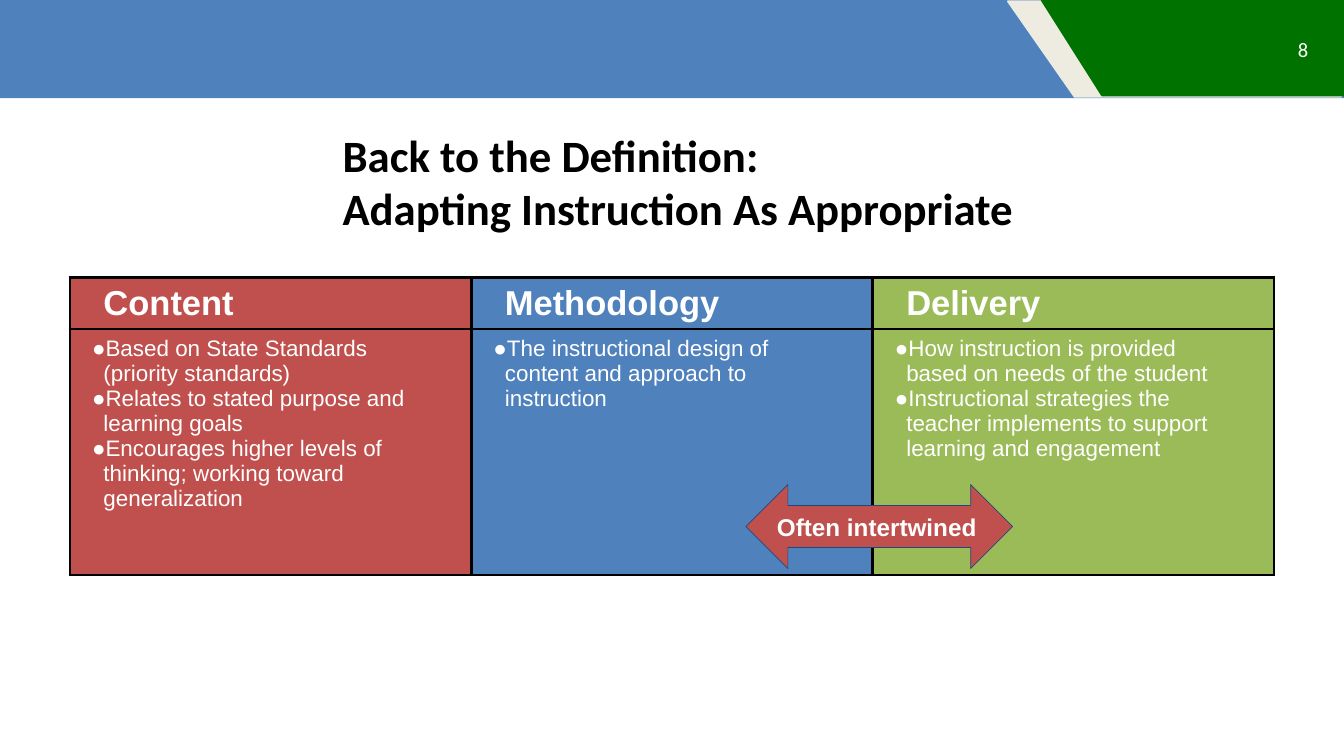
import pptx
import pptx.util
import pptx.dml.color
import pptx.enum.shapes
import pptx.enum.text
import pptx.oxml
import pptx.oxml.ns

SHAPES = pptx.enum.shapes.MSO_SHAPE
MIDDLE = pptx.enum.text.MSO_ANCHOR.MIDDLE
COLORS = {
    "blue": "4F81BD", "cream": "EEECE1", "dark_green": "007200", "red": "C0504D",
    "lime": "9BBB59", "navy": "1F497D", "black": "000000", "white": "FFFFFF",
}
COLUMNS, ROWS = 80, 45

deck = pptx.Presentation()
deck.slide_width = pptx.util.Inches(20)
deck.slide_height = pptx.util.Inches(11.25)
slide = deck.slides.add_slide(deck.slide_layouts[6])


def place(left, top, width, height):
    column, row = deck.slide_width / COLUMNS, deck.slide_height / ROWS
    return [round(n) for n in (left * column, top * row, width * column, height * row)]


def write(paragraph, words, size, font, color, bold=False):
    run = paragraph.add_run()
    run.text = words
    run.font.size = pptx.util.Pt(size)
    run.font.name = font
    run.font.bold = bold
    run.font.color.rgb = pptx.dml.color.RGBColor.from_string(COLORS[color])


outlines = [
    (SHAPES.RECTANGLE, (0, 0, 80, 5.84), 0, "blue", None, 0),
    (SHAPES.FLOWCHART_MANUAL_INPUT, (67.08, -7, 5.68, 19.84), 270, "cream", "cream", 2),
    (SHAPES.FLOWCHART_MANUAL_INPUT, (68.16, -6.16, 5.68, 18), 270, "dark_green", "dark_green", 2),
]
arrow_outline = (SHAPES.LEFT_RIGHT_ARROW, (44.4, 28.84, 15.88, 5), 0, "red", "navy", 0.75)

title = slide.shapes.add_textbox(*place(20, 8.28, 48.72, 5)).text_frame
title.word_wrap = True
title.vertical_anchor = MIDDLE
write(title.paragraphs[0], "Back to the Definition:", 48, "Calibri", "black", True)
write(title.add_paragraph(), "Adapting Instruction As Appropriate", 48, "Calibri", "black", True)

topics = [
    ("Content", "red", [
        "Based on State Standards (priority standards)",
        "Relates to stated purpose and learning goals",
        "Encourages higher levels of thinking; working toward generalization",
    ]),
    ("Methodology", "blue", [
        "The instructional design of content and approach to instruction",
    ]),
    ("Delivery", "lime", [
        "How instruction is provided based on needs of the student",
        "Instructional strategies the teacher implements to support learning and engagement",
    ]),
]
topic_frame = slide.shapes.add_table(2, len(topics), *place(4.16, 16.52, 71.68, 17.72))
topic_table = topic_frame.table
topic_table.first_row = topic_table.horz_banding = False
for topic_row, height in zip(topic_table.rows, (3.08, 14.64)):
    topic_row.height = round(deck.slide_height * height / ROWS)

for index, (heading, color, points) in enumerate(topics):
    for level, lines in enumerate(([heading], points)):
        cell = topic_table.cell(level, index)
        cell.margin_left = cell.margin_top = pptx.util.Inches(0.1)
        cell.margin_right = pptx.util.Inches(0.7 if level else 0.1)
        cell.margin_bottom = pptx.util.Inches(0.1 if level else 0.05)
        properties = cell._tc.get_or_add_tcPr()
        for side in ("lnL", "lnR", "lnT", "lnB"):
            weight = 2 if side == ("lnB", "lnT")[level] else 3
            properties.append(pptx.oxml.parse_xml(
                f'<a:{side} {pptx.oxml.ns.nsdecls("a")} w="{pptx.util.Pt(weight)}"><a:solidFill>'
                f'<a:srgbClr val="{COLORS["black"]}"/></a:solidFill></a:{side}>'))
        cell.fill.solid()
        cell.fill.fore_color.rgb = pptx.dml.color.RGBColor.from_string(COLORS[color])
        for number, words in enumerate(lines):
            frame = cell.text_frame
            paragraph = frame.add_paragraph() if number else frame.paragraphs[0]
            indents = paragraph._p.get_or_add_pPr()
            indents.set("marL", str(pptx.util.Inches(0.4)))
            indents.set("indent", str(pptx.util.Inches(-0.17 * level)))
            if level:
                for bullet_part in (
                    f'buClr {pptx.oxml.ns.nsdecls("a")}><a:srgbClr val="{COLORS["white"]}"/></a:buClr>',
                    f'buFont {pptx.oxml.ns.nsdecls("a")} typeface="Arial"/>',
                    f'buChar {pptx.oxml.ns.nsdecls("a")} char="●"/>',
                ):
                    indents.append(pptx.oxml.parse_xml(f"<a:{bullet_part}"))
            write(paragraph, words, 24 if level else 37, "Arial", "white", not level)

for kind, box, turn, fill, edge, weight in outlines + [arrow_outline]:
    shape = slide.shapes.add_shape(kind, *place(*box))
    shape.rotation = turn
    shape.shadow.inherit = False
    shape.fill.solid()
    shape.fill.fore_color.rgb = pptx.dml.color.RGBColor.from_string(COLORS[fill])
    if edge:
        shape.line.color.rgb = pptx.dml.color.RGBColor.from_string(COLORS[edge])
        shape.line.width = pptx.util.Pt(weight)
    else:
        shape.line.fill.background()

arrow_label = shape.text_frame
arrow_label.vertical_anchor = MIDDLE
arrow_label.margin_left = arrow_label.margin_right = pptx.util.Inches(0.15)
arrow_label.margin_top = arrow_label.margin_bottom = pptx.util.Inches(0.15)
arrow_label.paragraphs[0].alignment = pptx.enum.text.PP_ALIGN.LEFT
write(arrow_label.paragraphs[0], "Often intertwined", 26, "Arial", "white", True)

page_number = slide.shapes.add_textbox(*place(74.68, 1.72, 4, 2.4)).text_frame
page_number.word_wrap = True
page_number.vertical_anchor = MIDDLE
page_number.margin_left = page_number.margin_right = pptx.util.Inches(0.2)
page_number.margin_top = page_number.margin_bottom = pptx.util.Inches(0.1)
page_number.paragraphs[0].alignment = pptx.enum.text.PP_ALIGN.RIGHT
write(page_number.paragraphs[0], "8", 22, "Calibri", "white")

deck.save("out.pptx")
